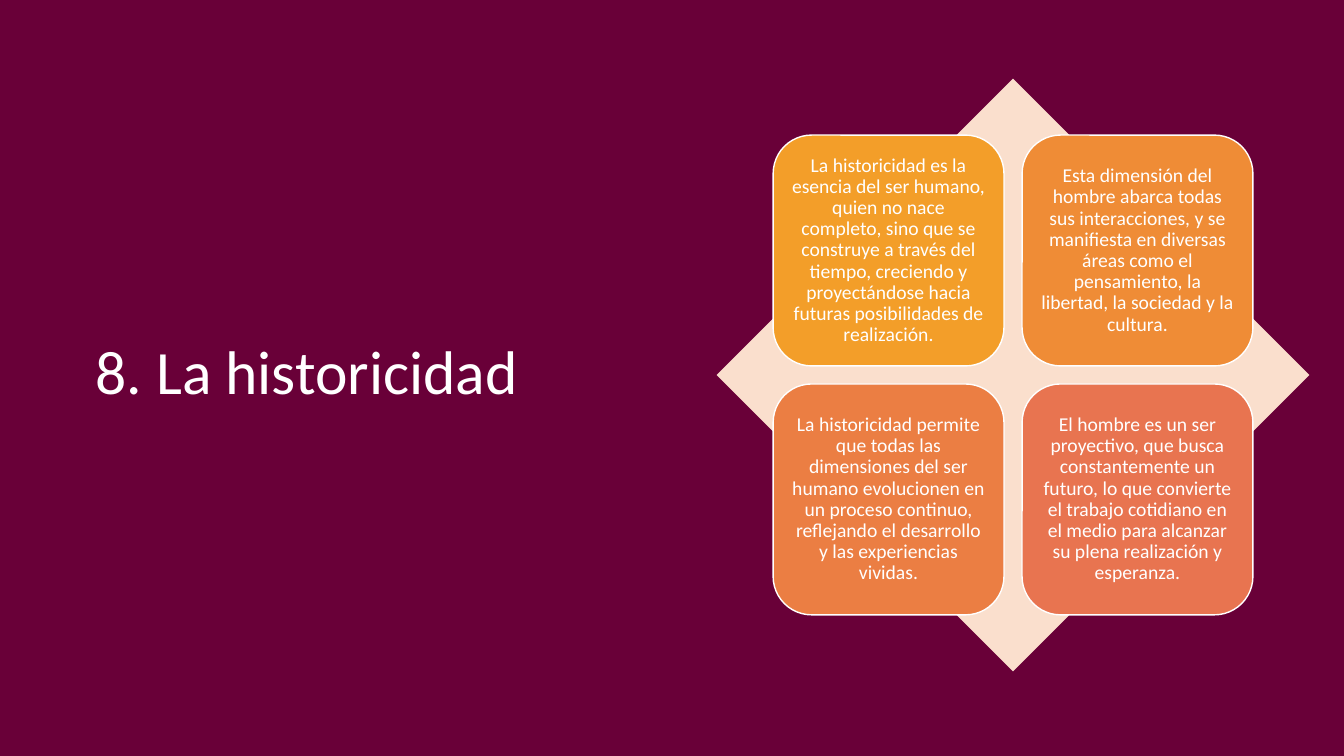
from lxml.etree import SubElement
from pptx import Presentation
from pptx.dml.color import RGBColor
from pptx.enum.shapes import MSO_SHAPE as Preset
from pptx.enum.text import MSO_ANCHOR as Anchor, PP_ALIGN as Align
from pptx.oxml.ns import qn
from pptx.util import Pt

WIDTH, HEIGHT = 960, 540
DIAMOND_SIZE = 423.36
CENTER_X, CENTER_Y = 723.6, 267.84
CARD_SIZE, CARD_GAP = 164.9, 12.9
CARD_INSET = 4.2

WHITE = RGBColor(0xFF, 0xFF, 0xFF)
DARK_WINE = RGBColor(0x42, 0x00, 0x23)
WINE = RGBColor(0x6E, 0x00, 0x3B)
PEACH = RGBColor(0xFA, 0xDF, 0xCD)
AMBER = RGBColor(0xF3, 0x9E, 0x29)
ORANGE = RGBColor(0xEF, 0x8C, 0x36)
TANGERINE = RGBColor(0xEB, 0x7E, 0x43)
CORAL = RGBColor(0xE8, 0x74, 0x50)

CARDS = [
    (AMBER, "La historicidad es la esencia del ser humano, quien no nace completo, "
            "sino que se construye a través del tiempo, creciendo y proyectándose "
            "hacia futuras posibilidades de realización."),
    (ORANGE, "Esta dimensión del hombre abarca todas sus interacciones, y se "
             "manifiesta en diversas áreas como el pensamiento, la libertad, "
             "la sociedad y la cultura."),
    (TANGERINE, "La historicidad permite que todas las dimensiones del ser humano "
                "evolucionen en un proceso continuo, reflejando el desarrollo y "
                "las experiencias vividas."),
    (CORAL, "El hombre es un ser proyectivo, que busca constantemente un futuro, "
            "lo que convierte el trabajo cotidiano en el medio para alcanzar su "
            "plena realización y esperanza."),
]


def add_filled(slide, preset, left, top, width, height, color):
    """Add a flat preset shape without outline."""
    shape = slide.shapes.add_shape(preset, Pt(left), Pt(top), Pt(width), Pt(height))
    shape.shadow.inherit = False
    shape.fill.solid()
    shape.fill.fore_color.rgb = color
    shape.line.fill.background()
    return shape


def set_opacity(shape, percent):
    """Make the solid fill of a shape partly transparent."""
    color = shape.fill._xPr.find(qn("a:solidFill"))[0]
    SubElement(color, qn("a:alpha")).set("val", str(percent * 1000))


def write_text(shape, text, size, align):
    """Write one white, vertically centred paragraph."""
    frame = shape.text_frame
    frame.word_wrap = True
    frame.vertical_anchor = Anchor.MIDDLE
    paragraph = frame.paragraphs[0]
    paragraph.alignment = align
    paragraph.line_spacing = 0.9
    run = paragraph.add_run()
    run.text = text
    run.font.name = "Calibri"
    run.font.size = Pt(size)
    run.font.color.rgb = WHITE


def add_backdrop(slide):
    """Lay the wine tint over the dark background."""
    slide.background.fill.solid()
    slide.background.fill.fore_color.rgb = DARK_WINE
    add_filled(slide, Preset.RECTANGLE, 0, 0, WIDTH, HEIGHT, DARK_WINE)
    tint = add_filled(slide, Preset.RECTANGLE, 0, 0, WIDTH, HEIGHT, WINE)
    set_opacity(tint, 90)


def add_title(slide, text):
    """Add the slide title on the left half."""
    title = slide.shapes.add_textbox(Pt(61.2), Pt(38.9), Pt(397.4), Pt(457.9))
    write_text(title, text, 44, Align.LEFT)


def add_card(slide, left, top, color, text):
    """Add one rounded card with its statement."""
    card = add_filled(slide, Preset.ROUNDED_RECTANGLE, left, top, CARD_SIZE, CARD_SIZE, color)
    card.line.color.rgb = WHITE
    card.line.width = Pt(1)
    frame = card.text_frame
    frame.margin_left = frame.margin_right = Pt(CARD_INSET)
    frame.margin_top = frame.margin_bottom = Pt(CARD_INSET)
    write_text(card, text, 14, Align.CENTER)


def add_matrix(slide):
    """Add the diamond and the two-by-two cards around its centre."""
    half = DIAMOND_SIZE / 2
    add_filled(slide, Preset.DIAMOND, CENTER_X - half, CENTER_Y - half,
               DIAMOND_SIZE, DIAMOND_SIZE, PEACH)
    pitch = CARD_SIZE + CARD_GAP
    first_left = CENTER_X - CARD_GAP / 2 - CARD_SIZE
    first_top = CENTER_Y - CARD_GAP / 2 - CARD_SIZE
    for index, (color, text) in enumerate(CARDS):
        row, column = divmod(index, 2)
        add_card(slide, first_left + column * pitch, first_top + row * pitch, color, text)


def main():
    """Build the slide and save it."""
    deck = Presentation()
    deck.slide_width, deck.slide_height = Pt(WIDTH), Pt(HEIGHT)
    slide = deck.slides.add_slide(deck.slide_layouts[6])
    add_backdrop(slide)
    add_title(slide, "8. La historicidad")
    add_matrix(slide)
    deck.save("out.pptx")


if __name__ == "__main__":
    main()
